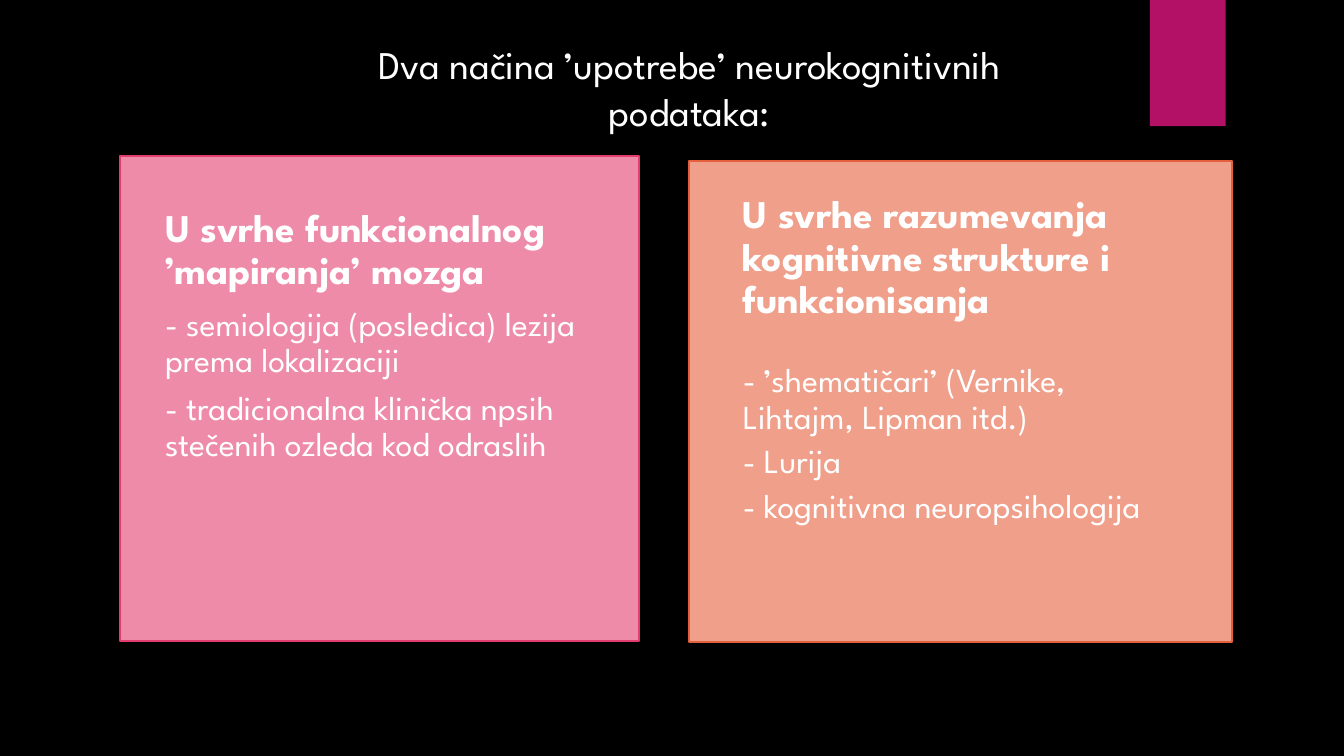
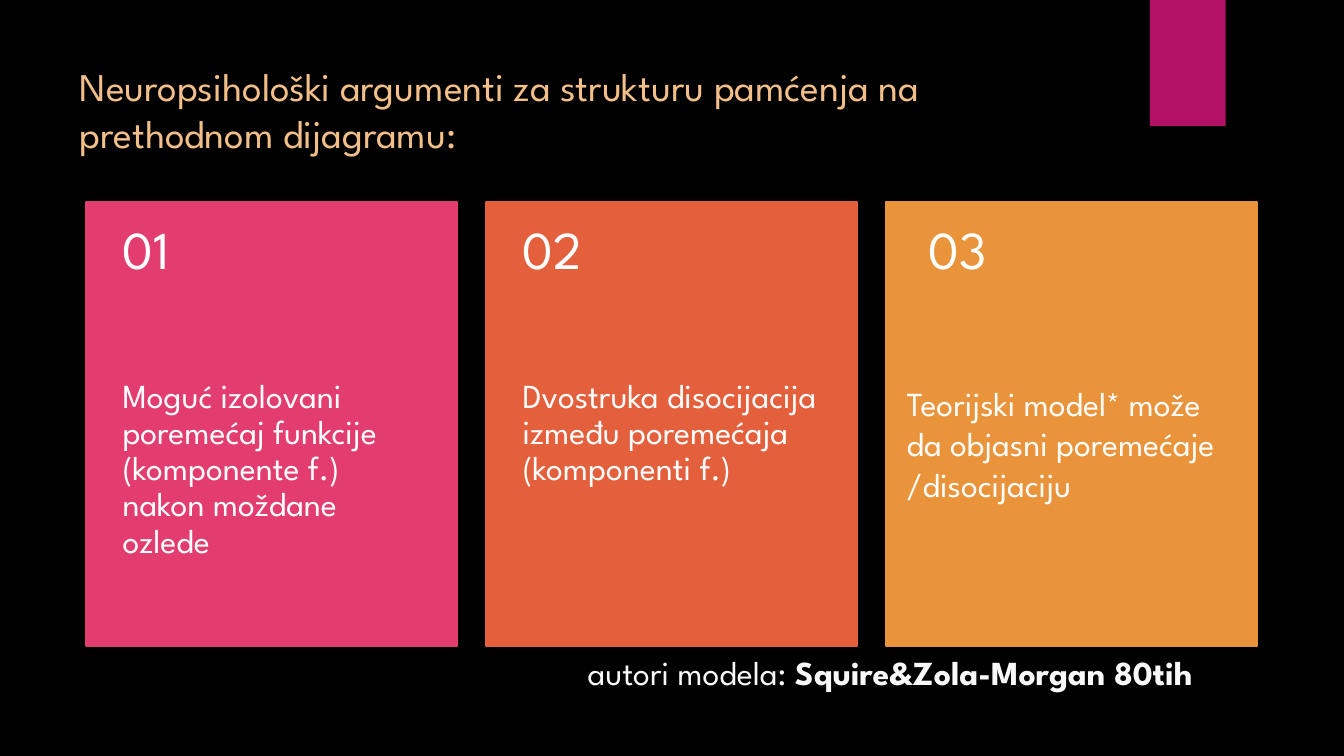
"""Builds two slides on neurocognitive data and the structure of memory."""
from dataclasses import dataclass

from pptx import Presentation
from pptx.dml.color import RGBColor
from pptx.enum.shapes import MSO_SHAPE
from pptx.enum.text import MSO_ANCHOR, PP_ALIGN
from pptx.util import Cm, Pt

RECT = MSO_SHAPE.RECTANGLE
TOP = MSO_ANCHOR.TOP
LEFT, CENTER = PP_ALIGN.LEFT, PP_ALIGN.CENTER


@dataclass(frozen=True)
class Theme:
    font: str = "League Spartan"
    background: str = "000000"
    band: str = "B31166"
    white: str = "FFFFFF"
    credit: str = "F8F8F8"
    sand: str = "F2BF89"
    pink: str = "E33D6F"
    light_pink: str = "EE8BA9"
    orange: str = "E45F3C"
    light_orange: str = "EF9F8A"
    amber: str = "E9943A"
    title: int = 28
    body: int = 24
    number: int = 38
    outline: float = 1.5
    tight: float = 0.9


class Deck:
    def __init__(self, theme):
        self.theme = theme
        self.prs = Presentation()
        self.prs.slide_width, self.prs.slide_height = Cm(33.87), Cm(19.05)
        self.s = None

    def slide(self):
        self.s = self.prs.slides.add_slide(self.prs.slide_layouts[6])
        fill = self.s.background.fill
        fill.solid()
        fill.fore_color.rgb = RGBColor.from_string(self.theme.background)
        self.box(28.98, 0, 1.91, 3.18, self.theme.band)

    def box(self, x, y, w, h, fill, line=None):
        sp = self.s.shapes.add_shape(RECT, Cm(x), Cm(y), Cm(w), Cm(h))
        sp.shadow.inherit = False
        sp.fill.solid()
        sp.fill.fore_color.rgb = RGBColor.from_string(fill)
        if line:
            sp.line.color.rgb = RGBColor.from_string(line)
            sp.line.width = Pt(self.theme.outline)
        else:
            sp.line.fill.background()
        return sp

    def frame(self, sp, left=0, top=0, right=0):
        tf = sp.text_frame
        tf.word_wrap = True
        tf.vertical_anchor = TOP
        tf.margin_left, tf.margin_top = Cm(left), Cm(top)
        tf.margin_right, tf.margin_bottom = Cm(right), 0
        return tf

    def style(self, p, size, color=None, bold=None, align=LEFT, spacing=1.0):
        p.alignment = align
        p.line_spacing = spacing
        p.font.name = self.theme.font
        p.font.size = Pt(size)
        p.font.bold = bold
        p.font.color.rgb = RGBColor.from_string(color or self.theme.white)

    def text(self, x, y, w, h, text, size, **look):
        sp = self.s.shapes.add_textbox(Cm(x), Cm(y), Cm(w), Cm(h))
        p = self.frame(sp).paragraphs[0]
        p.text = text
        self.style(p, size, **look)
        return p

    def title(self, x, y, w, text, **look):
        self.text(x, y, w, 2.38, text, self.theme.title, **look)

    def list_card(self, place, fill, line, insets, heading, items, gaps):
        t = self.theme
        tf = self.frame(self.box(*place, fill, line), *insets)
        p = tf.paragraphs[0]
        p.text = heading
        self.style(p, t.title, bold=True, spacing=t.tight)
        p.space_after = Pt(gaps[0])
        for item in items:
            p = tf.add_paragraph()
            p.text = item
            self.style(p, t.body, spacing=t.tight)
            p.space_after = Pt(gaps[1])

    def number_card(self, index, color, number_inset, body, body_inset,
                    body_top, body_width, spacing):
        t = self.theme
        x = 2.18 + 10.08 * index
        self.box(x, 5.08, 9.35, 11.2, color, color)
        self.text(x + number_inset, 5.46, 3, 1.6, f"{index + 1:02}", t.number)
        self.text(x + body_inset, body_top, body_width, 5.8, body, t.body,
                  spacing=spacing)

    def credit(self, label, names):
        t = self.theme
        p = self.text(14.81, 16.43, 17.05, 1.02, label, t.body, color=t.credit)
        r = p.add_run()
        r.text = names
        r.font.bold = True


def main():
    t = Theme()
    deck = Deck(t)

    deck.slide()
    deck.list_card(
        (3.02, 3.94, 13.08, 12.22), t.light_pink, t.pink, (1.14, 1.32, 0.94),
        "U svrhe funkcionalnog ’mapiranja’ mozga",
        ["- semiologija (posledica) lezija prema lokalizaciji",
         "- tradicionalna klinička npsih stečenih ozleda kod odraslih"],
        (9.8, 8.4))
    deck.list_card(
        (17.37, 4.06, 13.69, 12.12), t.light_orange, t.orange, (1.35, 0.85, 1.35),
        "U svrhe razumevanja kognitivne strukture i funkcionisanja",
        ["- ’shematičari’ (Vernike, Lihtajm, Lipman itd.)",
         "- Lurija",
         "- kognitivna neuropsihologija"],
        (30, 6))
    deck.title(7.95, 1.02, 18.85,
               "Dva načina ’upotrebe’ neurokognitivnih podataka:", align=CENTER)

    deck.slide()
    cards = [
        (t.pink, 0.91,
         "Moguć izolovani poremećaj funkcije (komponente f.) nakon moždane ozlede",
         0.91, 9.55, 7.52, t.tight),
        (t.orange, 0.91,
         "Dvostruka disocijacija između poremećaja (komponenti f.)",
         0.91, 9.55, 7.52, t.tight),
        (t.amber, 1.07,
         "Teorijski model* može da objasni poremećaje /disocijaciju",
         0.51, 9.65, 7.86, 1.0),
    ]
    for index, card in enumerate(cards):
        deck.number_card(index, *card)
    deck.title(2.01, 1.57, 24.5,
               "Neuropsihološki argumenti za strukturu pamćenja na prethodnom dijagramu:",
               color=t.sand)
    deck.credit("autori modela: ", "Squire&Zola-Morgan 80tih")

    deck.prs.save("out.pptx")


if __name__ == "__main__":
    main()
